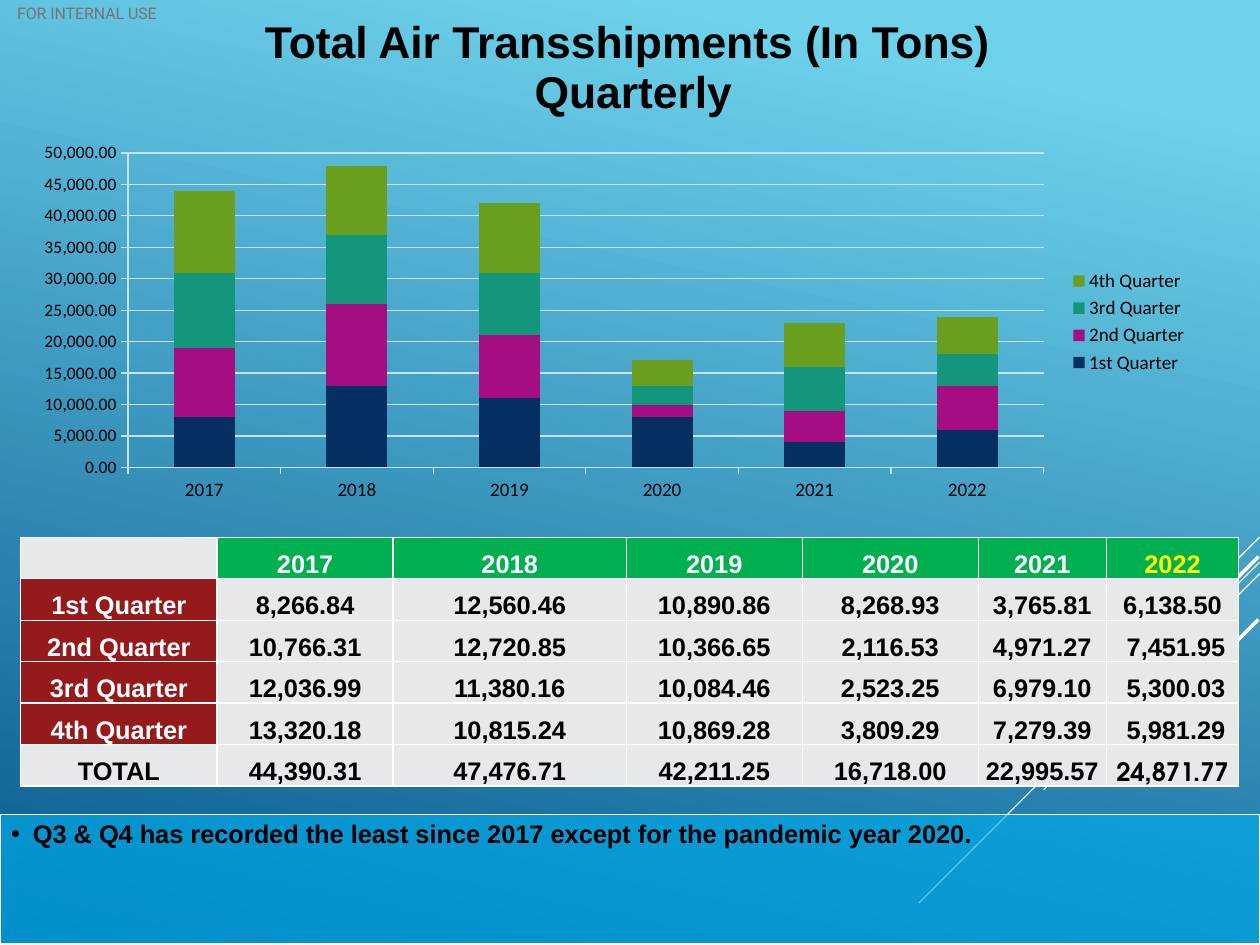
from dataclasses import dataclass
from pptx import Presentation
from pptx.chart.data import CategoryChartData
from pptx.dml.color import RGBColor
from pptx.enum.chart import XL_CHART_TYPE, XL_LEGEND_POSITION, XL_TICK_MARK
from pptx.enum.shapes import MSO_CONNECTOR, MSO_SHAPE
from pptx.enum.text import MSO_ANCHOR, PP_ALIGN
from pptx.oxml import parse_xml
from pptx.oxml.ns import nsdecls, qn
from pptx.util import Inches, Pt

STACKED = XL_CHART_TYPE.COLUMN_STACKED
LEGEND_RIGHT = XL_LEGEND_POSITION.RIGHT
TICK_OUT, TICK_NONE = XL_TICK_MARK.OUTSIDE, XL_TICK_MARK.NONE
STRAIGHT, RECTANGLE = MSO_CONNECTOR.STRAIGHT, MSO_SHAPE.RECTANGLE
TOP, MIDDLE, BOTTOM = MSO_ANCHOR.TOP, MSO_ANCHOR.MIDDLE, MSO_ANCHOR.BOTTOM
LEFT, CENTER = PP_ALIGN.LEFT, PP_ALIGN.CENTER

LABEL = "FOR INTERNAL USE"
TITLE = "Total Air Transshipments (In Tons) \nQuarterly"
NOTE = "Q3 & Q4 has recorded the least since 2017 except for the pandemic year 2020."
YEARS = ["2017", "2018", "2019", "2020", "2021", "2022"]
QUARTERS = {
    "1st Quarter": ["8,266.84", "12,560.46", "10,890.86", "8,268.93", "3,765.81", "6,138.50"],
    "2nd Quarter": ["10,766.31", "12,720.85", "10,366.65", "2,116.53", "4,971.27", " 7,451.95"],
    "3rd Quarter": ["12,036.99", "11,380.16", "10,084.46", "2,523.25", "6,979.10", " 5,300.03"],
    "4th Quarter": ["13,320.18", "10,815.24", "10,869.28", "3,809.29", "7,279.39", " 5,981.29"],
}
TOTALS = ["44,390.31", "47,476.71", "42,211.25", "16,718.00", "22,995.57", "24,871.77"]
CHART_TONS = {  # thousands of tons
    "1st Quarter": [8, 13, 11, 8, 4, 6],
    "2nd Quarter": [11, 13, 10, 2, 5, 7],
    "3rd Quarter": [12, 11, 10, 3, 7, 5],
    "4th Quarter": [13, 11, 11, 4, 7, 6],
}

SLIDE_SIZE = (28 / 2.54, 21 / 2.54)  # 28 by 21 centimetres
COLUMN_WIDTHS = [1.72, 1.54, 2.04, 1.54, 1.54, 1.12, 1.16]
TABLE_TOP, TABLE_HEIGHT = 4.7, 2.18
CHART_PLACE = (0.18, 1.18, 10.32, 3.27)
PLOT_PLACE = (1.12, 1.34, 8.01, 2.75)
RAYS = [  # start x, start y, horizontal run of a 45 degree line, width
    (11.02, 4.7, 0.91, 0.75),
    (11.02, 4.92, 2.98, 0.75),
    (11.02, 5.02, 1.89, 0.75),
    (11.01, 4.87, 1.73, 2.25),
    (11.01, 5.42, 1.26, 2.25),
]


@dataclass(frozen=True)
class Theme:
    black: str = "000000"
    white: str = "FFFFFF"
    grey: str = "747474"
    grid: str = "C3E4EF"
    sky: str = "6ED2EB"
    deep: str = "06588E"
    note: str = "00B0F0"
    header: str = "00B050"
    latest: str = "FFFF00"
    quarter: str = "941A1B"
    cell: str = "E7E8EA"
    series: tuple = ("052F61", "A50E82", "14967C", "6A9E1F")
    font: str = "Arial"
    chart_font: str = "Calibri"
    label_font: str = "Roboto"
    total_font: str = "TeX Gyre Adventor"
    title_size: int = 28
    body_size: int = 16
    chart_size: int = 12
    value_size: int = 11
    label_size: int = 10


THEME = Theme()


def rgb(color):
    return RGBColor.from_string(color)


def style_font(font, size, color, name, bold=False):
    font.size, font.name, font.bold = Pt(size), name, bold
    font.color.rgb = rgb(color)


def style_line(line, width, color=THEME.white):
    line.color.rgb = rgb(color)
    line.width = Pt(width)


def write(frame, text, size, color, name=THEME.font, bold=True, align=CENTER):
    frame.text = text
    for para in frame.paragraphs:
        para.alignment, para.line_spacing = align, 0.93
        for span in para.runs:
            style_font(span.font, size, color, name, bold)


def add_text(slide, place, text, top_inset=0, **style):
    frame = slide.shapes.add_textbox(*map(Inches, place)).text_frame
    frame.word_wrap, frame.vertical_anchor = True, MIDDLE
    frame.margin_left = frame.margin_right = frame.margin_bottom = 0
    frame.margin_top = Inches(top_inset)
    write(frame, text, **style)


def add_background(slide):
    fill = slide.background.fill
    fill.gradient()
    fill.gradient_angle = 258
    for stop, position, color in zip(fill.gradient_stops, (0.1, 1), (THEME.sky, THEME.deep)):
        stop.position, stop.color.rgb = position, rgb(color)
    for x, y, run, width in RAYS:
        ray = slide.shapes.add_connector(STRAIGHT, *map(Inches, (x, y, x - run, y + run)))
        style_line(ray.line, width)
        ray.element.spPr.append(parse_xml(f"<a:effectLst {nsdecls('a')}/>"))


def add_note(slide):
    box = slide.shapes.add_shape(RECTANGLE, *map(Inches, (0, 7.13, SLIDE_SIZE[0], 1.13)))
    box.shadow.inherit = False
    box.fill.solid()
    box.fill.fore_color.rgb = rgb(THEME.note)
    fill_color = box.element.spPr.find(qn("a:solidFill")).find(qn("a:srgbClr"))
    fill_color.append(parse_xml(f'<a:alpha {nsdecls("a")} val="63000"/>'))
    style_line(box.line, 0.75)
    box.text_frame.vertical_anchor = TOP
    write(box.text_frame, NOTE, THEME.body_size, THEME.black, align=LEFT)
    properties = box.text_frame.paragraphs[0]._p.get_or_add_pPr()
    properties.set("marL", str(Inches(0.19)))
    properties.set("indent", str(Inches(-0.19)))
    properties.append(parse_xml(
        f'<a:buClr {nsdecls("a")}><a:srgbClr val="{THEME.black}"/></a:buClr>'))
    properties.append(parse_xml(f'<a:buFont {nsdecls("a")} typeface="{THEME.font}"/>'))
    properties.append(parse_xml(f'<a:buChar {nsdecls("a")} char="•"/>'))


def fill_cell(cell, text, fill, color, font):
    cell.vertical_anchor = BOTTOM
    cell.margin_left = cell.margin_right = cell.margin_top = cell.margin_bottom = 0
    for side in "LRTB":
        cell._tc.get_or_add_tcPr().append(parse_xml(
            f'<a:ln{side} {nsdecls("a")} w="{Pt(1)}"><a:solidFill>'
            f'<a:srgbClr val="{THEME.white}"/></a:solidFill></a:ln{side}>'))
    cell.fill.solid()
    cell.fill.fore_color.rgb = rgb(fill)
    write(cell.text_frame, text, THEME.body_size, color, font)


def add_quarter_table(slide):
    rows = [["", *YEARS], *([name, *tons] for name, tons in QUARTERS.items()), ["TOTAL", *TOTALS]]
    place = (0.18, TABLE_TOP, sum(COLUMN_WIDTHS), TABLE_HEIGHT)
    table = slide.shapes.add_table(len(rows), len(rows[0]), *map(Inches, place)).table
    table.horz_banding = False
    for column, width in zip(table.columns, COLUMN_WIDTHS):
        column.width = Inches(width)
    last_row, last_column = len(rows) - 1, len(YEARS)
    for r, row in enumerate(rows):
        table.rows[r].height = Inches(TABLE_HEIGHT / len(rows))
        for c, text in enumerate(row):
            fill, color, font = THEME.cell, THEME.black, THEME.font
            if r == 0 and c > 0:
                fill = THEME.header
                color = THEME.latest if c == last_column else THEME.white
            elif c == 0 and 0 < r < last_row:
                fill, color = THEME.quarter, THEME.white
            elif (r, c) == (last_row, last_column):
                font = THEME.total_font
            fill_cell(table.cell(r, c), text, fill, color, font)


def add_quarter_chart(slide):
    data = CategoryChartData(number_format="#,##0.00")
    data.categories = YEARS
    for name, thousands in CHART_TONS.items():
        data.add_series(name, [value * 1000 for value in thousands])
    chart = slide.shapes.add_chart(STACKED, *map(Inches, CHART_PLACE), data).chart
    style_font(chart.font, THEME.label_size, THEME.black, THEME.chart_font)
    chart.has_title = False
    chart.has_legend = True
    chart.legend.position = LEGEND_RIGHT
    chart.legend.include_in_layout = False
    style_font(chart.legend.font, THEME.chart_size, THEME.black, THEME.chart_font)
    plot = chart.plots[0]
    plot.gap_width, plot.overlap, plot.vary_by_categories = 150, 100, False
    for series, color in zip(plot.series, THEME.series):
        series.format.fill.solid()
        series.format.fill.fore_color.rgb = rgb(color)
    axes = ((chart.category_axis, THEME.chart_size), (chart.value_axis, THEME.value_size))
    for axis, size in axes:
        axis.major_tick_mark, axis.minor_tick_mark = TICK_OUT, TICK_NONE
        style_line(axis.format.line, 0.75, THEME.grid)
        style_font(axis.tick_labels.font, size, THEME.black, THEME.chart_font)
    values = chart.value_axis
    values.minimum_scale, values.maximum_scale, values.major_unit = 0, 50000, 5000
    values.tick_labels.number_format = "#,##0.00"
    values.tick_labels.number_format_is_linked = False
    style_line(values.major_gridlines.format.line, 0.75, THEME.grid)
    area = chart.element.chart.plotArea
    for old in area.findall(qn("c:layout")):
        area.remove(old)
    left, top, width, height = CHART_PLACE
    x, y, w, h = PLOT_PLACE
    parts = {"x": (x - left) / width, "y": (y - top) / height, "w": w / width, "h": h / height}
    sizes = "".join(f'<c:{key} val="{value:.4f}"/>' for key, value in parts.items())
    area.insert(0, parse_xml(
        f'<c:layout {nsdecls("c")}><c:manualLayout><c:layoutTarget val="inner"/>'
        f'<c:xMode val="edge"/><c:yMode val="edge"/>{sizes}</c:manualLayout></c:layout>'))


def main():
    deck = Presentation()
    deck.slide_width, deck.slide_height = map(Inches, SLIDE_SIZE)
    slide = deck.slides.add_slide(deck.slide_layouts[6])
    add_background(slide)
    add_text(slide, (0, 0, 1.52, 0.25), LABEL, size=THEME.label_size, color=THEME.grey,
             name=THEME.label_font, bold=False)
    add_text(slide, (0.58, 0.25, 9.92, 0.67), TITLE, top_inset=0.03,
             size=THEME.title_size, color=THEME.black)
    add_note(slide)
    add_quarter_table(slide)
    add_quarter_chart(slide)
    deck.save("out.pptx")


if __name__ == "__main__":
    main()
